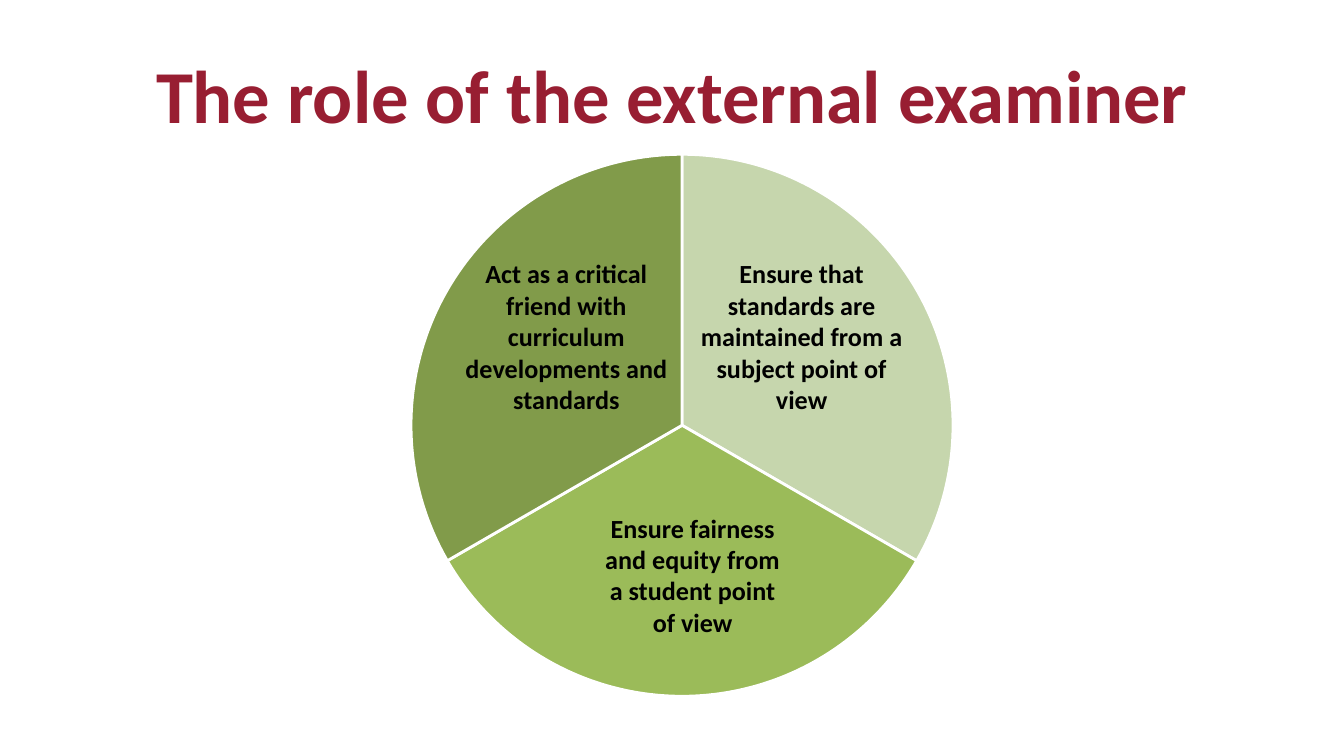
from lxml import etree
from pptx import Presentation
from pptx.chart.data import CategoryChartData
from pptx.dml.color import RGBColor
from pptx.enum.chart import XL_CHART_TYPE
from pptx.enum.text import MSO_ANCHOR, MSO_AUTO_SIZE, PP_ALIGN
from pptx.oxml.ns import qn
from pptx.util import Pt

PIE = XL_CHART_TYPE.PIE
MIDDLE, TOP = MSO_ANCHOR.MIDDLE, MSO_ANCHOR.TOP
FIXED = MSO_AUTO_SIZE.NONE
CENTER = PP_ALIGN.CENTER

RED = RGBColor(0x98, 0x1E, 0x32)
BLACK = RGBColor(0, 0, 0)
WHITE = RGBColor(255, 255, 255)
PALE = RGBColor(0xC6, 0xD6, 0xAD)
GREEN = RGBColor(0x9B, 0xBB, 0x59)
DARK = RGBColor(0x81, 0x9B, 0x4A)
FONT = "Calibri"

TITLE = "The role of the external examiner"
ROLES = [
    ("Ensure that standards are maintained from a subject point of view",
     33, PALE, (364.3, 134.6, 130.3, 113.8)),
    ("Ensure fairness and equity from a student point of view",
     33, GREEN, (314.6, 270.7, 113, 97.2)),
    ("Act as a critical friend with curriculum developments and standards",
     33, DARK, (235.4, 134.6, 136.1, 113.8)),
]
CHART = (115.9, 72, 499, 311.8)
DISC = 290.4


def write(shape, text, size, color, anchor):
    frame = shape.text_frame
    frame.word_wrap = True
    frame.auto_size = FIXED
    frame.vertical_anchor = anchor
    para = frame.paragraphs[0]
    para.alignment = CENTER
    run = para.add_run()
    run.text = text
    font = run.font
    font.name, font.size, font.bold = FONT, Pt(size), True
    font.color.rgb = color


def place_disc(chart, wide, high):
    plot = chart.element.find(".//" + qn("c:plotArea"))
    for old in plot.findall(qn("c:layout")):
        plot.remove(old)
    layout = etree.Element(qn("c:layout"))
    manual = etree.SubElement(layout, qn("c:manualLayout"))
    across, down = DISC / wide, DISC / high
    rules = [("layoutTarget", "inner"), ("xMode", "edge"), ("yMode", "edge"),
             ("x", (1 - across) / 2), ("y", (1 - down) / 2),
             ("w", across), ("h", down)]
    for tag, val in rules:
        etree.SubElement(manual, qn("c:" + tag)).set("val", str(val))
    plot.insert(0, layout)


def add_pie(slide):
    data = CategoryChartData()
    data.categories = [str(n + 1) for n in range(len(ROLES))]
    data.add_series("Series 1", [role[1] for role in ROLES])
    chart = slide.shapes.add_chart(PIE, *map(Pt, CHART), data).chart
    chart.has_title = False
    chart.has_legend = False
    chart.font.name, chart.font.size = FONT, Pt(10)
    chart.font.color.rgb = BLACK
    plot = chart.plots[0]
    plot.vary_by_categories = True
    for n, role in enumerate(ROLES):
        form = plot.series[0].points[n].format
        form.fill.solid()
        form.fill.fore_color.rgb = role[2]
        form.line.color.rgb = WHITE
        form.line.width = Pt(1.5)
    place_disc(chart, *CHART[2:])


def main():
    deck = Presentation()
    deck.slide_width, deck.slide_height = Pt(720), Pt(405)
    slide = deck.slides.add_slide(deck.slide_layouts[5])
    title = slide.shapes.title
    title.left, title.top = Pt(36), Pt(16.5)
    title.width, title.height = Pt(648), Pt(67.5)
    write(title, TITLE, 40, RED, MIDDLE)
    add_pie(slide)
    for text, _, _, box in ROLES:
        label = slide.shapes.add_textbox(*map(Pt, box))
        write(label, text, 14, BLACK, TOP)
    deck.save("out.pptx")


if __name__ == "__main__":
    main()
